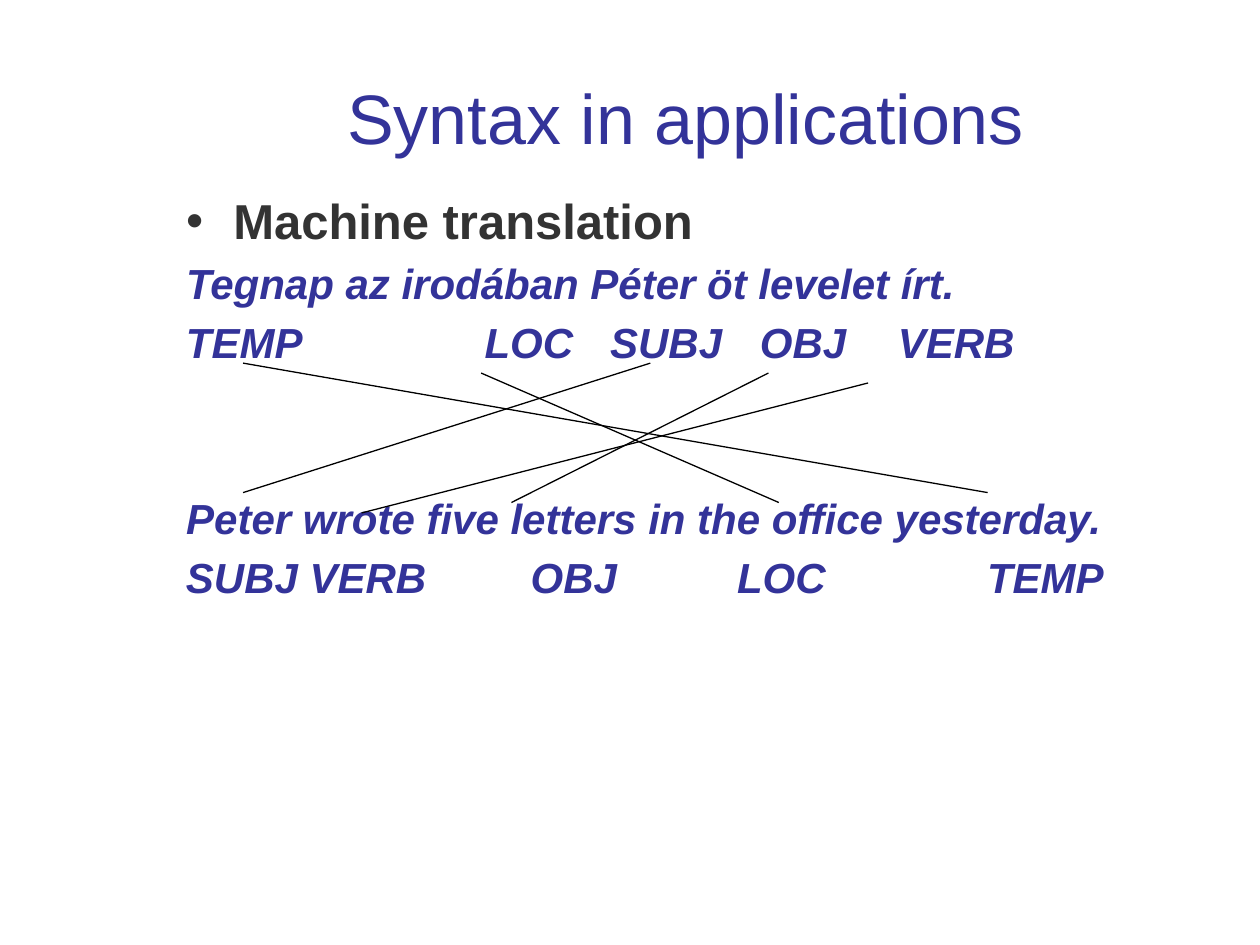
from lxml import etree
from pptx import Presentation
from pptx.dml.color import RGBColor
from pptx.enum import shapes, text
from pptx.oxml.ns import qn
from pptx.util import Cm, Pt

COLORS = {"heading": "333399", "topic": "333333", "line": "000000"}


class SlideBuilder:
    """Holds the style and the current slide."""

    font_name = "Arial"
    left, width = 3.5, 20.3

    def __init__(self, deck):
        self.page = deck.slides.add_slide(deck.slide_layouts[1])
        box = self.page.placeholders[1]
        self.place(box, self.left, 3.72, self.width, 12.5)
        self.body = box.text_frame
        self.body.word_wrap = True
        self.body.vertical_anchor = text.MSO_ANCHOR.TOP

    def place(self, box, left, top, width, height):
        box.left, box.top = Cm(left), Cm(top)
        box.width, box.height = Cm(width), Cm(height)

    def style(self, paragraph, size, color, bold=False, italic=False):
        font = paragraph.font
        font.name, font.size = self.font_name, Pt(size)
        font.bold, font.italic = bold, italic
        font.color.rgb = RGBColor.from_string(COLORS[color])

    def title(self, words):
        box = self.page.shapes.title
        self.place(box, 4.82, 0.84, 18, 3)
        box.text_frame.vertical_anchor = text.MSO_ANCHOR.MIDDLE
        paragraph = box.text_frame.paragraphs[0]
        paragraph.text = words
        paragraph.alignment = text.PP_ALIGN.CENTER
        self.style(paragraph, 40, "heading")

    def bullet(self, words):
        paragraph = self.body.paragraphs[0]
        paragraph.text = words
        paragraph.space_before = Pt(0)
        properties = paragraph._p.get_or_add_pPr()
        properties.set("marL", str(Cm(0.95)))
        properties.set("indent", str(-Cm(0.95)))
        etree.SubElement(properties, qn("a:buChar"), char="•")
        self.style(paragraph, 28, "topic", bold=True)

    def sentence(self, words, space):
        paragraph = self.body.add_paragraph()
        paragraph.text = words
        paragraph.space_before = Pt(space)
        properties = paragraph._p.get_or_add_pPr()
        properties.set("marL", "0")
        properties.set("indent", "0")
        etree.SubElement(properties, qn("a:buNone"))
        self.style(paragraph, 24, "heading", bold=True, italic=True)

    def roles(self, words, top, stops):
        box = self.page.shapes.add_textbox(
            Cm(self.left), Cm(top), Cm(self.width), Cm(1.2))
        box.text_frame.word_wrap = True
        paragraph = box.text_frame.paragraphs[0]
        paragraph.text = words
        tabs = etree.SubElement(paragraph._p.get_or_add_pPr(), qn("a:tabLst"))
        for stop in stops:
            etree.SubElement(tabs, qn("a:tab"), pos=str(Cm(stop)), algn="l")
        self.style(paragraph, 24, "heading", bold=True, italic=True)

    def line(self, x1, y1, x2, y2):
        connector = self.page.shapes.add_connector(
            shapes.MSO_CONNECTOR.STRAIGHT, Cm(x1), Cm(y1), Cm(x2), Cm(y2))
        connector.line.color.rgb = RGBColor.from_string(COLORS["line"])
        connector.line.width = Pt(0.75)
        etree.SubElement(connector._element.spPr, qn("a:effectLst"))


def main():
    deck = Presentation()
    deck.slide_width, deck.slide_height = Cm(25.4), Cm(19.05)
    slide = SlideBuilder(deck)

    # Title and sentence pair
    slide.title("Syntax in applications")
    slide.bullet("Machine translation")
    slide.sentence("Tegnap az irodában Péter öt levelet írt.", 4.3)
    slide.sentence("Peter wrote five letters in the office yesterday.", 105.6)

    # Role of each phrase, under its sentence
    slide.roles("TEMP\tLOC\tSUBJ\tOBJ\tVERB", 6.25, (6.02, 8.55, 11.57, 14.35))
    slide.roles("SUBJ VERB\tOBJ\tLOC\tTEMP", 10.99, (6.95, 11.11, 16.15))

    # Links from each Hungarian phrase down to its English match
    links = [
        (13.11, 7.32, 4.9, 9.93),    # subject
        (15.49, 7.52, 10.31, 10.13),  # object
        (17.5, 7.72, 7.29, 10.34),   # verb
        (4.9, 7.32, 19.91, 9.93),    # time
        (9.7, 7.52, 15.7, 10.13),    # place
    ]
    for link in links:
        slide.line(*link)

    deck.save("out.pptx")


if __name__ == "__main__":
    main()
